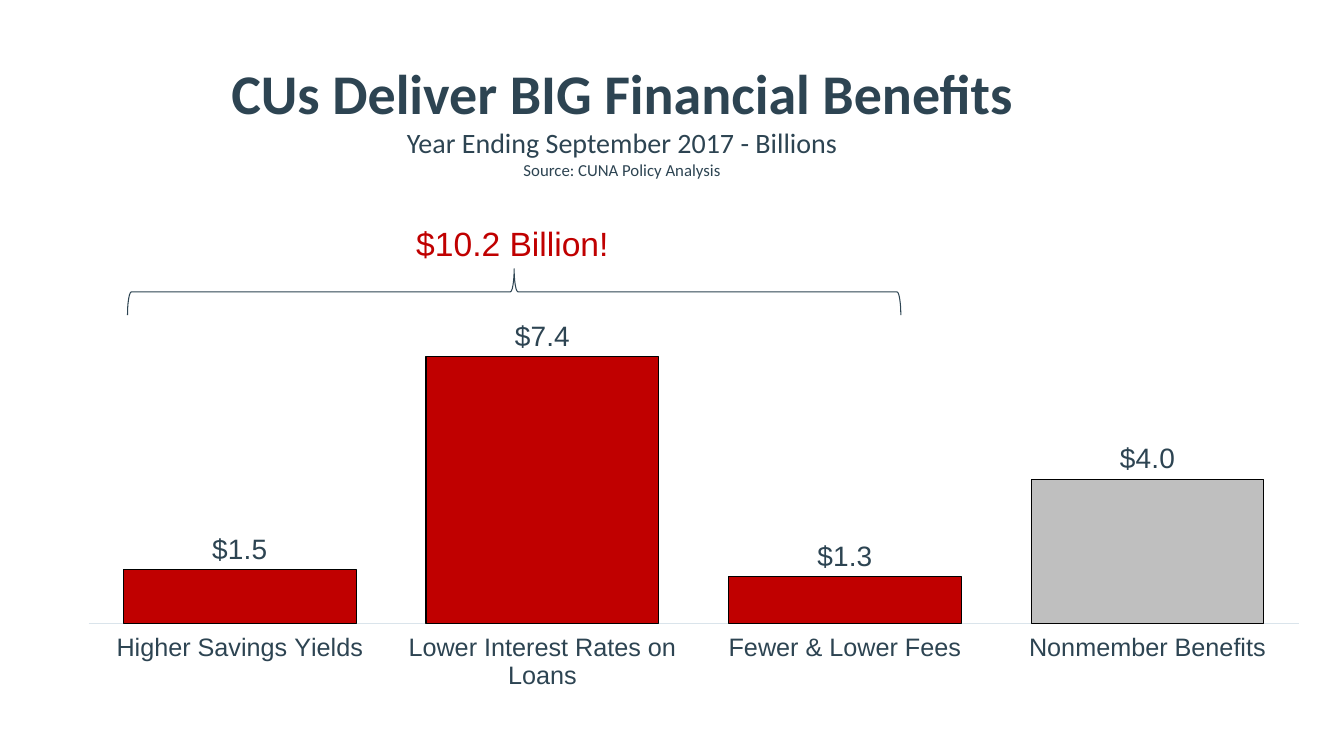
"""Build a slide with a column chart of financial benefits."""
from lxml import etree
from pptx import Presentation
from pptx.chart.data import CategoryChartData
from pptx.dml.color import RGBColor
from pptx.enum.chart import (XL_CHART_TYPE, XL_LABEL_POSITION, XL_TICK_MARK,
                             XL_TICK_LABEL_POSITION)
from pptx.enum.shapes import MSO_SHAPE
from pptx.enum.text import MSO_ANCHOR, MSO_AUTO_SIZE, PP_ALIGN
from pptx.oxml.ns import qn
from pptx.util import Inches, Pt

INK = "2D4452"
RED = "C00000"
GRAY = "BFBFBF"
HEADING = [
    ("CUs Deliver BIG Financial Benefits", 40, True),
    ("Year Ending September 2017 - Billions", 20, False),
    ("Source: CUNA Policy Analysis", 12, False),
]
BENEFITS = {
    "Higher Savings Yields": 1.5,
    "Lower Interest Rates on Loans": 7.4,
    "Fewer & Lower Fees": 1.3,
    "Nonmember Benefits": 4.0,
}


def tint(color, value):
    color.rgb = RGBColor.from_string(value)


def style(font, name, size, color, bold=False):
    font.name, font.size, font.bold = name, Pt(size), bold
    tint(font.color, color)


def stroke(line, color):
    tint(line.color, color)
    line.width = Pt(0.75)


def paint(fill, color):
    fill.solid()
    tint(fill.fore_color, color)


def place(shape, left, top, width, height):
    shape.left, shape.top = Inches(left), Inches(top)
    shape.width, shape.height = Inches(width), Inches(height)


def add_title(slide):
    title = slide.shapes.title
    place(title, 1.17, 0.58, 10, 1.24)
    frame = title.text_frame
    frame.text = "\n".join(line for line, _, _ in HEADING)
    frame.word_wrap = True
    frame.auto_size = MSO_AUTO_SIZE.NONE
    frame.vertical_anchor = MSO_ANCHOR.TOP
    frame.margin_top = frame.margin_bottom = 0
    for para, (_, size, bold) in zip(frame.paragraphs, HEADING):
        para.alignment = PP_ALIGN.CENTER
        para.space_before = Pt(0)
        para.line_spacing = 1.0
        style(para.runs[0].font, "Calibri", size, INK, bold)


def set_plot(chart, **box):
    """Fix the inner plot area as fractions of the chart."""
    area = chart.element.find(".//" + qn("c:plotArea"))
    for old in area.findall(qn("c:layout")):
        area.remove(old)
    layout = etree.Element(qn("c:layout"))
    area.insert(0, layout)
    manual = etree.SubElement(layout, qn("c:manualLayout"))
    parts = {"layoutTarget": "inner", "xMode": "edge", "yMode": "edge", **box}
    for tag, value in parts.items():
        etree.SubElement(manual, qn("c:" + tag)).set("val", str(value))


def add_chart(slide):
    data = CategoryChartData(number_format="General")
    data.categories = list(BENEFITS)
    data.add_series("Series 1", list(BENEFITS.values()))
    frame = slide.shapes.add_chart(
        XL_CHART_TYPE.COLUMN_CLUSTERED,
        Inches(0.68), Inches(0.36), Inches(12.4), Inches(6.75), data)
    chart = frame.chart
    chart.has_title = chart.has_legend = False
    style(chart.font, "Calibri", 10, INK)
    set_plot(chart, x=0.016, y=0.439, w=0.968, h=0.424)

    scale = chart.value_axis
    scale.minimum_scale, scale.maximum_scale = 0, 8
    scale.has_major_gridlines = scale.visible = False

    axis = chart.category_axis
    axis.tick_label_position = XL_TICK_LABEL_POSITION.LOW
    axis.major_tick_mark = axis.minor_tick_mark = XL_TICK_MARK.NONE
    style(axis.tick_labels.font, "Arial", 18, INK)
    stroke(axis.format.line, "DAE4EB")

    plot = chart.plots[0]
    plot.gap_width = 30
    plot.vary_by_categories = False
    series = plot.series[0]
    for part, color in ((series, RED), (series.points[3], GRAY)):
        paint(part.format.fill, color)
        stroke(part.format.line, "000000")
    labels = series.data_labels
    labels.show_value = True
    labels.position = XL_LABEL_POSITION.OUTSIDE_END
    labels.number_format = r"\$#,##0.0"
    labels.number_format_is_linked = False
    style(labels.font, "Arial", 20, INK)


def add_brace(slide):
    brace = slide.shapes.add_shape(
        MSO_SHAPE.RIGHT_BRACE,
        Inches(4.87), Inches(-0.94), Inches(0.46), Inches(7.67))
    brace.rotation = 270
    brace.shadow.inherit = False
    brace.fill.background()
    stroke(brace.line, INK)


def add_total(slide):
    box = slide.shapes.add_textbox(
        Inches(4.03), Inches(2.16), Inches(2.13), Inches(0.51))
    frame = box.text_frame
    frame.text = "$10.2 Billion!"
    frame.word_wrap = False
    frame.auto_size = MSO_AUTO_SIZE.SHAPE_TO_FIT_TEXT
    style(frame.paragraphs[0].runs[0].font, "Arial", 24, RED)


def main():
    deck = Presentation()
    deck.slide_width, deck.slide_height = Inches(13.33), Inches(7.5)
    slide = deck.slides.add_slide(deck.slide_layouts[5])
    paint(slide.background.fill, "FFFFFF")
    add_title(slide)
    add_chart(slide)
    add_brace(slide)
    add_total(slide)
    deck.save("out.pptx")


if __name__ == "__main__":
    main()
